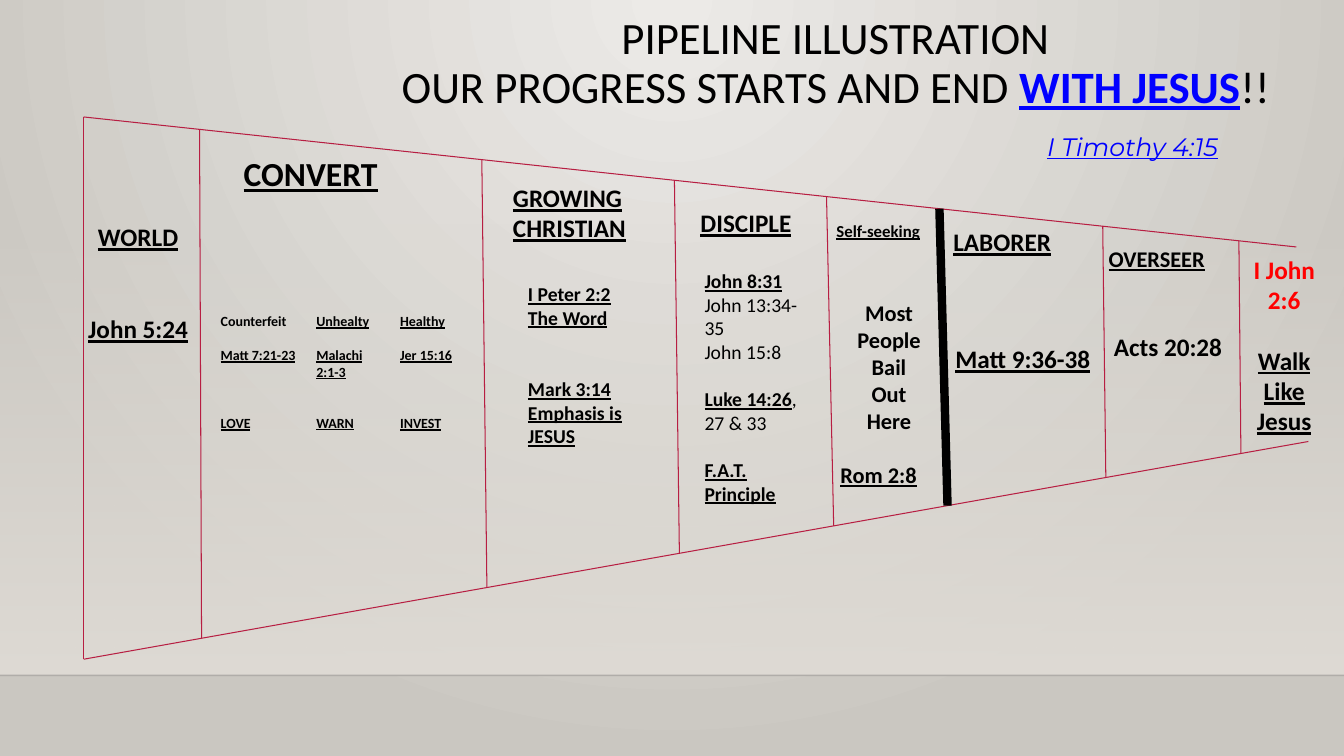
from dataclasses import dataclass

from pptx import Presentation
from pptx.dml.color import RGBColor
from pptx.enum.shapes import MSO_CONNECTOR, MSO_SHAPE
from pptx.enum.text import MSO_ANCHOR, MSO_AUTO_SIZE, PP_ALIGN
from pptx.oxml.ns import qn
from pptx.oxml.xmlchemy import OxmlElement
from pptx.util import Inches, Pt


@dataclass(frozen=True)
class Theme:
    body_font: str = "Calibri"
    verse_font: str = "Montserrat"
    ink: str = "000000"
    pipe: str = "B71E42"
    link: str = "0000FF"
    goal: str = "FF0000"
    haze: str = "DFDBD5"
    glow: str = "ECEAE7"
    edge: str = "CAC7C1"
    title: int = 32
    stage: int = 24
    heading: int = 18
    label: int = 16
    verse: int = 14
    caption: int = 12
    note: int = 10
    line_height: float = 1.22


THEME = Theme()
WIDTH, HEIGHT = Inches(13.33), Inches(7.5)
CEILING = ((6.23, 15.47), (96.45, 32.67))
FLOOR = ((6.23, 87.2), (97.35, 58.4))
WALLS = [(6.23, 6.23), (14.85, 15), (35.85, 36.23), (50.18, 50.55),
         (61.5, 62.03), (82.05, 82.28), (92.18, 92.33)]
BARRIER = (69.9, 70.5)


def across(share):
    return round(WIDTH * share / 100)


def down(share):
    return round(HEIGHT * share / 100)


def height_on(edge, x):
    (x1, y1), (x2, y2) = edge
    return y1 + (y2 - y1) * (x - x1) / (x2 - x1)


def set_alpha(color, percent):
    alpha = OxmlElement("a:alpha")
    alpha.set("val", str(percent * 1000))
    color.append(alpha)


def add_line(page, start, end, color=THEME.pipe, width=0.75):
    line = page.shapes.add_connector(
        MSO_CONNECTOR.STRAIGHT, across(start[0]), down(start[1]), across(end[0]), down(end[1]))
    line.line.color.rgb = RGBColor.from_string(color)
    line.line.width = Pt(width)
    line.element.spPr.append(OxmlElement("a:effectLst"))
    return line


def add_wall(page, top_x, bottom_x, **style):
    add_line(page, (top_x, height_on(CEILING, top_x)),
             (bottom_x, height_on(FLOOR, bottom_x)), **style)


def color_stops(fill, *colors):
    fill.gradient()
    for stop, color in zip(fill.gradient_stops, colors):
        stop.color.rgb = RGBColor.from_string(color)


def paint_background(page):
    color_stops(page.background.fill, THEME.glow, THEME.edge)
    gradient = page.element.find(".//" + qn("a:gradFill"))
    gradient.remove(gradient.find(qn("a:lin")))
    circle = OxmlElement("a:path")
    circle.set("path", "circle")
    center = OxmlElement("a:fillToRect")
    for side, share in zip("ltrb", (43, 0, 43, 100)):
        center.set(side, str(share * 1000))
    circle.append(center)
    gradient.append(circle)

    haze = page.shapes.add_shape(MSO_SHAPE.RECTANGLE, 0, down(29.47), WIDTH, down(59.87))
    haze.shadow.inherit = False
    color_stops(haze.fill, THEME.haze, THEME.haze)
    haze.fill.gradient_angle = 270
    haze.line.fill.background()
    set_alpha(haze.element.find(".//" + qn("a:srgbClr")), 0)

    horizon = add_line(page, (0, 89.33), (100, 89.33), "000001", 1)
    set_alpha(horizon.element.find(".//" + qn("a:srgbClr")), 20)


def set_font(font, size, color=THEME.ink, name=THEME.body_font):
    font.name = name
    font.size = Pt(size)
    font.color.rgb = RGBColor.from_string(color)


def set_style(font, style):
    font.bold = "b" in style
    font.italic = "i" in style
    font.underline = "u" in style


def add_title(page):
    title = page.shapes.title
    title.left, title.top = across(22.8), down(1.47)
    title.width, title.height = across(78.75), down(15.87)
    frame = title.text_frame
    frame.word_wrap = True
    frame.auto_size = MSO_AUTO_SIZE.NONE
    frame.vertical_anchor = MSO_ANCHOR.TOP
    para = frame.paragraphs[0]
    para.alignment = PP_ALIGN.CENTER
    para.line_spacing = 0.9
    set_font(para.font, THEME.title)
    para.add_run().text = "PIPELINE ILLUSTRATION"
    para.add_line_break()
    para.add_run().text = "OUR PROGRESS STARTS AND END "
    jesus = para.add_run()
    jesus.text = "WITH JESUS"
    set_style(jesus.font, "bu")
    jesus.font.color.rgb = RGBColor.from_string(THEME.link)
    para.add_run().text = "!!"


def line(*spans, gap=0, style="bu", color=THEME.ink, align=None):
    return spans, gap, style, color, align


def add_text(page, left, top, width, size, *lines, name=THEME.body_font, align=PP_ALIGN.LEFT):
    line_points = size * THEME.line_height
    rows = sum(1 + gap for _, gap, *_ in lines)
    box = page.shapes.add_textbox(across(left), down(top), across(width),
                                  Pt(rows * line_points) + Inches(0.1))
    frame = box.text_frame
    frame.word_wrap = True
    frame.auto_size = MSO_AUTO_SIZE.SHAPE_TO_FIT_TEXT
    for index, (spans, gap, style, color, own_align) in enumerate(lines):
        para = frame.paragraphs[0] if index == 0 else frame.add_paragraph()
        para.alignment = own_align or align
        if gap:
            para.space_before = Pt(round(gap * line_points, 1))
        set_font(para.font, size, color, name)
        if len(spans) == 1:
            set_style(para.font, style)
        for text, span_style in spans if len(spans) > 1 else [(spans[0], style)]:
            span = para.add_run()
            span.text = text
            if len(spans) > 1:
                set_style(span.font, span_style)


def add_stages(page):
    center = PP_ALIGN.CENTER
    headings = [
        (17.4, 19.6, 15.08, THEME.stage, ["CONVERT"]),
        (37.43, 23.47, 12.68, THEME.heading, ["GROWING", "CHRISTIAN"]),
        (51.38, 26.8, 10.5, THEME.heading, ["DISCIPLE"]),
        (61.5, 28.53, 8.48, THEME.caption, ["Self-seeking"]),
        (70.2, 29.33, 10.88, THEME.heading, ["LABORER"]),
        (70.35, 44.8, 12.6, THEME.heading, ["Matt 9:36-38"]),
        (81.75, 31.73, 10.65, THEME.label, ["OVERSEER"]),
    ]
    for left, top, width, size, words in headings:
        add_text(page, left, top, width, size, *map(line, words))

    add_text(page, 5.7, 28.67, 9.15, THEME.heading,
             line("WORLD"), line("John 5:24", gap=2), align=center)

    converts = [
        (15.68, 7.8, [line("Counterfeit", style="b"), line("Matt 7:21-23", gap=1),
                      line("LOVE", gap=3)]),
        (22.8, 9.23, [line("Unhealty"), line("Malachi", gap=1), line("2:1-3"),
                      line("WARN", gap=2)]),
        (29.03, 6, [line("Healthy"), line("Jer 15:16", gap=1), line("INVEST", gap=3)]),
    ]
    for left, width, lines in converts:
        add_text(page, left, 40.67, width, THEME.note, *lines)

    add_text(page, 38.55, 36.67, 9.45, THEME.verse,
             line("I Peter 2:2"), line("The Word"), line("Mark 3:14", gap=2),
             line("Emphasis is"), line("JESUS"))
    add_text(page, 51.68, 34.93, 9.75, THEME.verse,
             line("John 8:31"), line("John 13:34-35", style=""), line("John 15:8", style=""),
             line(("Luke 14:26", "bu"), (",", ""), gap=1), line("27 & 33", style=""),
             line("F.A.T.", gap=1), line("Principle"))
    add_text(page, 61.8, 38.93, 8.7, THEME.label,
             *[line(word, style="b") for word in ("Most", "People", "Bail", "Out", "Here")],
             line("Rom 2:8", gap=1, align=PP_ALIGN.LEFT), align=center)
    add_text(page, 82.13, 43.2, 11.03, THEME.heading, line("Acts 20:28", style="b"))
    add_text(page, 92.25, 32.93, 6.6, THEME.heading,
             line("I John", style="b", color=THEME.goal), line("2:6", style="b", color=THEME.goal),
             line("Walk", gap=1), line("Like"), line("Jesus"), align=center)
    add_text(page, 77.18, 16.67, 17.48, THEME.heading,
             line("I Timothy 4:15", style="iu", color=THEME.link), name=THEME.verse_font)


def main():
    deck = Presentation()
    deck.slide_width, deck.slide_height = WIDTH, HEIGHT
    page = deck.slides.add_slide(deck.slide_layouts[5])
    paint_background(page)
    add_title(page)
    for edge in (CEILING, FLOOR):
        add_line(page, *edge)
    for wall in WALLS:
        add_wall(page, *wall)
    add_wall(page, *BARRIER, color=THEME.ink, width=6)
    add_stages(page)
    deck.save("out.pptx")


if __name__ == "__main__":
    main()
